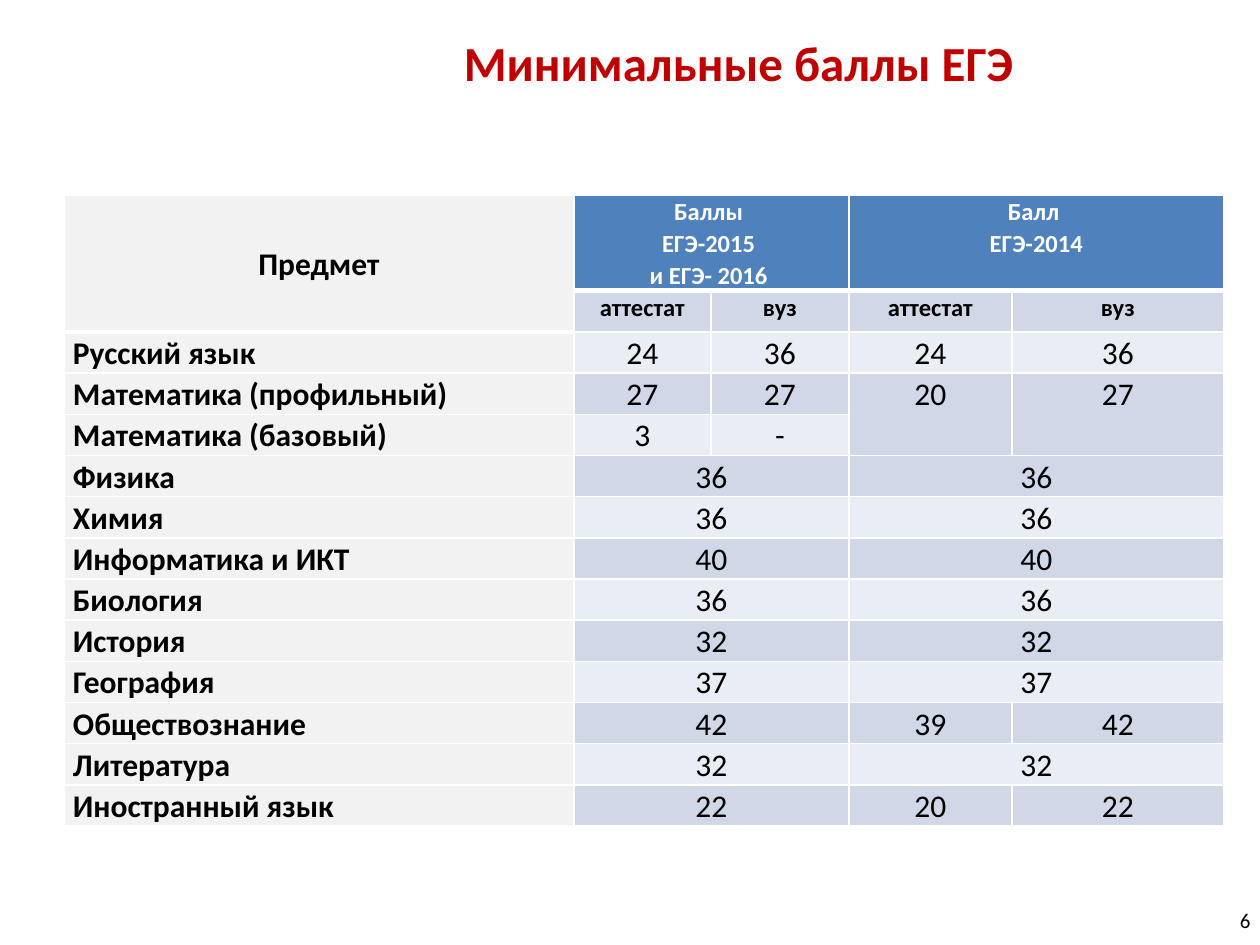
"""Build the slide with the table of minimum exam scores."""
from lxml import etree
from pptx import Presentation
from pptx import util as u
from pptx.dml.color import RGBColor
from pptx.enum import text
from pptx.oxml.ns import qn

PX = 914400 / 126
FONT = "Calibri"
COLORS = {
    "title": "C00000", "ink": "000000", "white": "FFFFFF", "header": "4F81BD",
    "subject": "F2F2F2", "dark_band": "D0D8E8", "light_band": "E9EDF4",
}
LEFT, UP = "<", "^"
COLUMN_WIDTHS = [510, 137, 138, 163, 212]
HEADER_HEIGHTS = [95, 40]
SUBJECT_HEIGHT = 41
SCORES = [
    ("Предмет", "Баллы \nЕГЭ-2015 \nи ЕГЭ- 2016 ", LEFT, "Балл \nЕГЭ-2014", LEFT),
    (UP, "аттестат", "вуз", "аттестат", "вуз"),
    ("Русский язык", "24", "36", "24", "36"),
    ("Математика (профильный)", "27", "27", "20", "27"),
    ("Математика (базовый)", "3", "-", UP, UP),
    ("Физика", "36", LEFT, "36", LEFT),
    ("Химия", "36", LEFT, "36", LEFT),
    ("Информатика и ИКТ", "40", LEFT, "40", LEFT),
    ("Биология", "36", LEFT, "36", LEFT),
    ("История", "32", LEFT, "32", LEFT),
    ("География", "37", LEFT, "37", LEFT),
    ("Обществознание", "42", LEFT, "39", "42"),
    ("Литература", "32", LEFT, "32", LEFT),
    ("Иностранный язык", "22", LEFT, "20", "22"),
]


def px(length):
    """Turn pixels into EMU."""
    return u.Emu(round(length * PX))


def color(name):
    """Look up a named colour."""
    return RGBColor.from_string(COLORS[name])


def write(frame, wording, size, ink, bold=False, align=text.PP_ALIGN.CENTER, spacing=None):
    """Fill a text frame with one formatted run per line."""
    for index, line in enumerate(wording.split("\n")):
        paragraph = frame.add_paragraph() if index else frame.paragraphs[0]
        paragraph.alignment = align
        paragraph.line_spacing = spacing
        run = paragraph.add_run()
        run.text = line
        run.font.name = FONT
        run.font.size = u.Pt(size)
        run.font.bold = bold
        run.font.color.rgb = color(ink)


def place(shape, left, top, width, height):
    """Move and size a shape."""
    shape.left, shape.top = px(left), px(top)
    shape.width, shape.height = px(width), px(height)


def add_title(slide):
    """Put the heading into the title placeholder."""
    title = slide.shapes.title
    place(title, 277, 26, 934, 72)
    title.text_frame.vertical_anchor = text.MSO_ANCHOR.TOP
    write(title.text_frame, "Минимальные баллы ЕГЭ ", 28, "title", bold=True)


def add_page_number(slide):
    """Add the page number in the lower right corner."""
    page = slide.shapes.add_textbox(px(1210), px(895), px(53), px(50))
    page.text_frame.word_wrap = True
    page.text_frame.vertical_anchor = text.MSO_ANCHOR.MIDDLE
    write(page.text_frame, "6", 12, "ink", align=text.PP_ALIGN.RIGHT)


def rule_below(row, column):
    """Give the width in points of the line under a cell."""
    return 3 if row == 0 or (row, column) == (1, 0) else 1


def draw_borders(cell, row, column):
    """Outline a cell in white, with heavy rules under the header."""
    above = rule_below(row - 1, column) if row else 1
    widths = {"a:lnL": 1, "a:lnR": 1, "a:lnT": above, "a:lnB": rule_below(row, column)}
    properties = cell._tc.get_or_add_tcPr()
    for side, width in widths.items():
        line = etree.SubElement(properties, qn(side), w=str(u.Pt(width)))
        fill = etree.SubElement(line, qn("a:solidFill"))
        etree.SubElement(fill, qn("a:srgbClr"), val=COLORS["white"])


def cell_fill(row, column):
    """Name the background of a cell."""
    if column == 0:
        return "subject"
    if row == 0:
        return "header"
    return "dark_band" if row % 2 else "light_band"


def merge_span(grid, row, column):
    """Join a cell with the marked cells to its right or below."""
    last_row, last_column = row, column
    while last_column + 1 < len(SCORES[row]) and SCORES[row][last_column + 1] == LEFT:
        last_column += 1
    while last_row + 1 < len(SCORES) and SCORES[last_row + 1][column] == UP:
        last_row += 1
    if (last_row, last_column) != (row, column):
        grid.cell(row, column).merge(grid.cell(last_row, last_column))


def fill_cell(grid, row, column):
    """Format one cell and write its wording."""
    cell, wording = grid.cell(row, column), SCORES[row][column]
    draw_borders(cell, row, column)
    cell.fill.solid()
    cell.fill.fore_color.rgb = color(cell_fill(row, column))
    cell.margin_left = cell.margin_right = px(9)
    cell.margin_top = cell.margin_bottom = 0
    if wording in (LEFT, UP):
        return
    is_header, is_subject = row < 2, column == 0
    if is_header and is_subject:
        cell.vertical_anchor = text.MSO_ANCHOR.MIDDLE
    write(
        cell.text_frame, wording,
        size=14 if is_header and not is_subject else 18,
        ink="white" if row == 0 and not is_subject else "ink",
        bold=is_header or is_subject,
        align=text.PP_ALIGN.LEFT if is_subject and not is_header else text.PP_ALIGN.CENTER,
        spacing=1.07,
    )
    merge_span(grid, row, column)


def add_scores(slide):
    """Add the table of scores by subject and year."""
    heights = HEADER_HEIGHTS + [SUBJECT_HEIGHT] * (len(SCORES) - len(HEADER_HEIGHTS))
    grid = slide.shapes.add_table(
        len(heights), len(COLUMN_WIDTHS), px(64), px(195),
        px(sum(COLUMN_WIDTHS)), px(sum(heights)),
    ).table
    for column, width in zip(grid.columns, COLUMN_WIDTHS):
        column.width = px(width)
    for row, height in zip(grid.rows, heights):
        row.height = px(height)
    for row in range(len(heights)):
        for column in range(len(COLUMN_WIDTHS)):
            fill_cell(grid, row, column)


def main():
    """Build and save the slide."""
    deck = Presentation()
    deck.slide_width, deck.slide_height = px(1260), px(945)
    slide = deck.slides.add_slide(deck.slide_layouts[5])
    add_title(slide)
    add_scores(slide)
    add_page_number(slide)
    deck.save("out.pptx")


if __name__ == "__main__":
    main()
